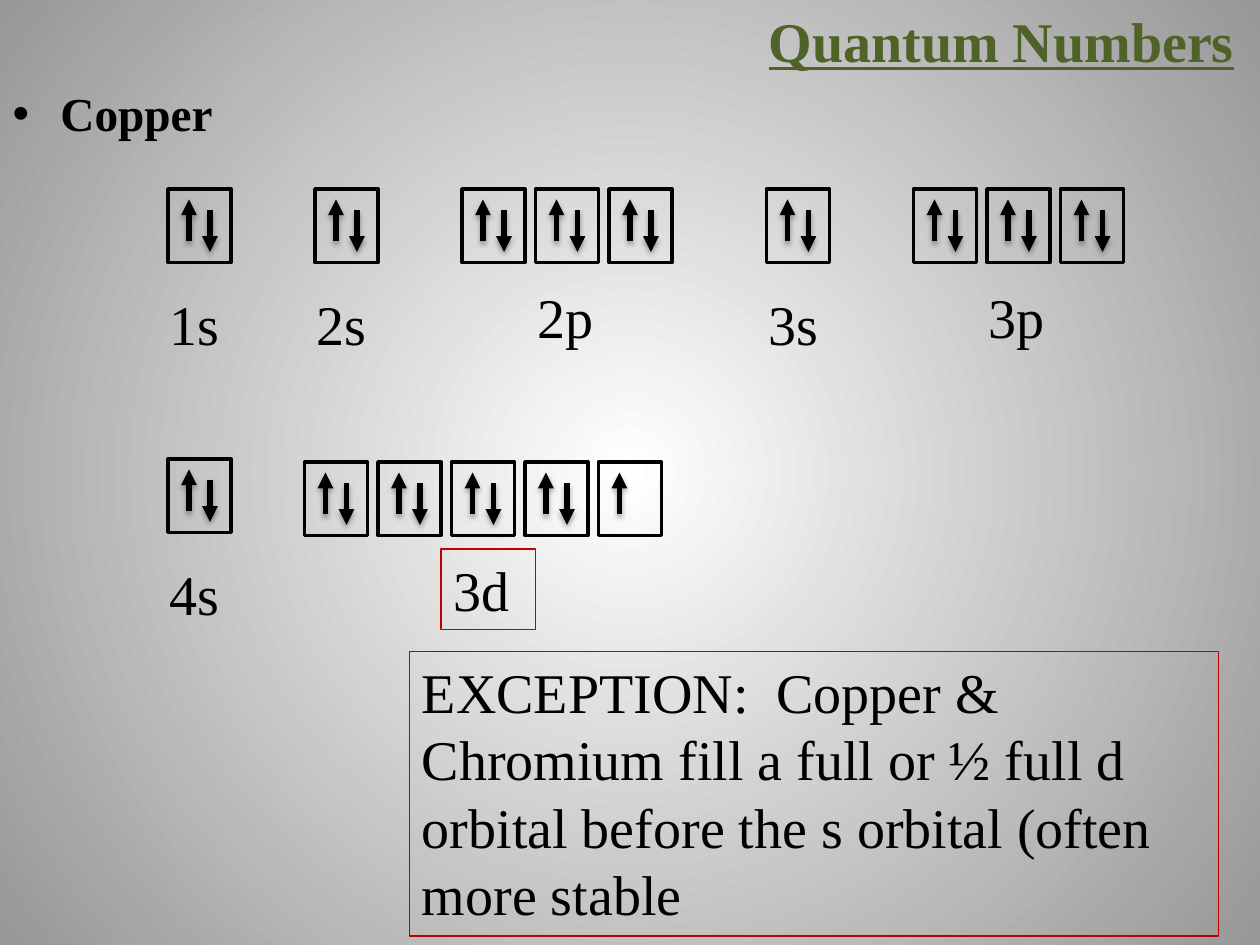
from pptx import Presentation
from pptx.dml.color import RGBColor
from pptx.enum.shapes import MSO_CONNECTOR, MSO_SHAPE
from pptx.enum.text import MSO_ANCHOR, MSO_AUTO_SIZE, PP_ALIGN
from pptx.oxml import parse_xml
from pptx.oxml.ns import nsdecls, qn
from pptx.util import Inches, Pt

# Content
TITLE = "Quantum Numbers"
ELEMENT = "Copper"
EXCEPTION = ("EXCEPTION:  Copper & Chromium fill a full or ½ full d orbital "
             "before the s orbital (often more stable")
# Subshell name, left and top in grid units, electrons in each orbital
SUBSHELLS = [
    ("1s", 16, 18, [2]),
    ("2s", 30, 18, [2]),
    ("2p", 44, 18, [2, 2, 2]),
    ("3s", 73, 18, [2]),
    ("3p", 87, 18, [2, 2, 2]),
    ("4s", 16, 43.7, [2]),
    ("3d", 29, 44, [2, 2, 2, 2, 1]),
]

THEME = {
    "font": "Times New Roman",
    "title": RGBColor(0x4F, 0x62, 0x28),
    "ink": RGBColor(0, 0, 0),
    "frame": RGBColor(0xC0, 0, 0),
    "background": [RGBColor(0xFF, 0xFF, 0xFF), RGBColor(0x97, 0x97, 0x97)],
    "large": Pt(32),
    "body": Pt(27),
}

# Layout: the grid unit is a twelfth of an inch
BOX_WIDTH, BOX_HEIGHT, BOX_PITCH = 6, 7, 7
SPINS = [(2, 5, 1), (4, 2, 6)]  # x, start y and end y inside an orbital
# Label left offset, top offset and width for each kind of subshell
LABELS = {"s": (-1, 9, 9), "p": (6, 8.3, 11), "d": (13, 8.3, 9)}
TEXT_HEIGHT = 0.64


def grid(units):
    return Inches(units / 12)


def place(shape, left, top, width, height):
    shape.left, shape.top = Inches(left), Inches(top)
    shape.width, shape.height = Inches(width), Inches(height)


def write(shape, text, size=THEME["large"], color=THEME["ink"], bold=False, underline=False):
    frame = shape.text_frame
    frame.text = text
    frame.word_wrap = True
    frame.auto_size = MSO_AUTO_SIZE.NONE
    frame.vertical_anchor = MSO_ANCHOR.TOP
    para = frame.paragraphs[0]
    para.alignment = PP_ALIGN.LEFT
    font = para.runs[0].font
    font.name, font.size, font.color.rgb = THEME["font"], size, color
    font.bold, font.underline = bold, underline
    return para


def add_rectangle(slide, left, top, width, height, color, weight):
    box = slide.shapes.add_shape(MSO_SHAPE.RECTANGLE, left, top, width, height)
    box.shadow.inherit = False
    box.fill.background()
    box.line.color.rgb, box.line.width = color, Pt(weight)
    return box


def add_electron(slide, x, start, end):
    arrow = slide.shapes.add_connector(
        MSO_CONNECTOR.STRAIGHT, grid(x), grid(start), grid(x), grid(end))
    arrow.line.color.rgb, arrow.line.width = THEME["ink"], Pt(3)
    properties = arrow.element.spPr
    properties.find(qn("a:ln")).append(
        parse_xml(f'<a:tailEnd {nsdecls("a")} type="triangle"/>'))
    properties.append(parse_xml(
        f'<a:effectLst {nsdecls("a")}><a:outerShdw blurRad="{Pt(3.1)}" dist="{Pt(1.8)}" '
        'dir="5400000" rotWithShape="0"><a:srgbClr val="000000"><a:alpha val="35000"/>'
        '</a:srgbClr></a:outerShdw></a:effectLst>'))


def add_subshell(slide, name, left, top, orbitals):
    for index, electrons in enumerate(orbitals):
        x = left + index * BOX_PITCH
        add_rectangle(slide, grid(x), grid(top), grid(BOX_WIDTH), grid(BOX_HEIGHT),
                      THEME["ink"], 2)
        for dx, start, end in SPINS[:electrons]:
            add_electron(slide, x + dx, top + start, top + end)
    dx, dy, width = LABELS[name[-1]]
    area = grid(left + dx), grid(top + dy), grid(width), Inches(TEXT_HEIGHT)
    if name == "3d":  # the exceptional subshell is framed
        label = add_rectangle(slide, *area, THEME["frame"], 0.75)
    else:
        label = slide.shapes.add_textbox(*area)
    write(label, name)


def paint_background(slide):
    fill = slide.background.fill
    fill.gradient()
    for stop, color, position in zip(fill.gradient_stops, THEME["background"], (0, 1)):
        stop.color.rgb, stop.position = color, position
    gradient = slide.element.find(".//" + qn("a:gradFill"))
    gradient.replace(gradient.find(qn("a:lin")), parse_xml(
        f'<a:path {nsdecls("a")} path="circle">'
        '<a:fillToRect l="50000" t="50000" r="50000" b="50000"/></a:path>'))


def main():
    deck = Presentation()
    deck.slide_width, deck.slide_height = Inches(10), Inches(7.5)
    slide = deck.slides.add_slide(deck.slide_layouts[1])
    paint_background(slide)

    # Title and bulleted element name
    title, body = slide.placeholders
    place(title, 6, 0, 4, TEXT_HEIGHT)
    write(title, TITLE, color=THEME["title"], bold=True, underline=True)
    place(body, 0, 0.67, 10, 0.51)
    para = write(body, ELEMENT, size=THEME["body"], bold=True)
    para.line_spacing = 0.9
    para.space_before = para.space_after = Pt(5.4)
    bullet = para._p.get_or_add_pPr()
    bullet.set("marL", str(Inches(0.38)))
    bullet.set("indent", str(Inches(-0.38)))
    bullet.append(parse_xml(f'<a:buChar {nsdecls("a")} char="•"/>'))

    # Orbital diagram
    for subshell in SUBSHELLS:
        add_subshell(slide, *subshell)

    # Exception note
    note = add_rectangle(slide, Inches(3.25), Inches(5.17), Inches(6.42), Inches(2.26),
                         THEME["frame"], 0.75)
    write(note, EXCEPTION)

    deck.save("out.pptx")


if __name__ == "__main__":
    main()
